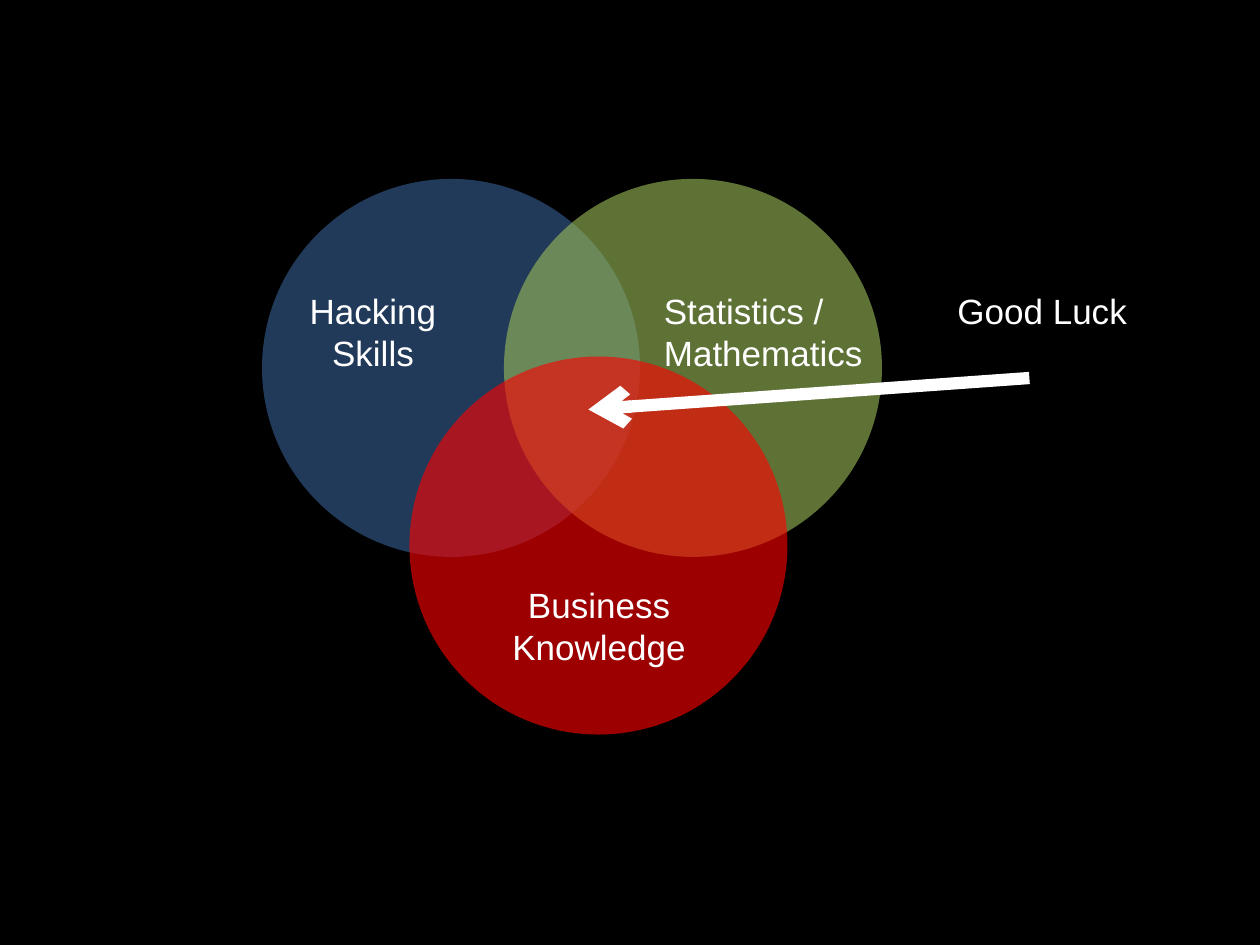
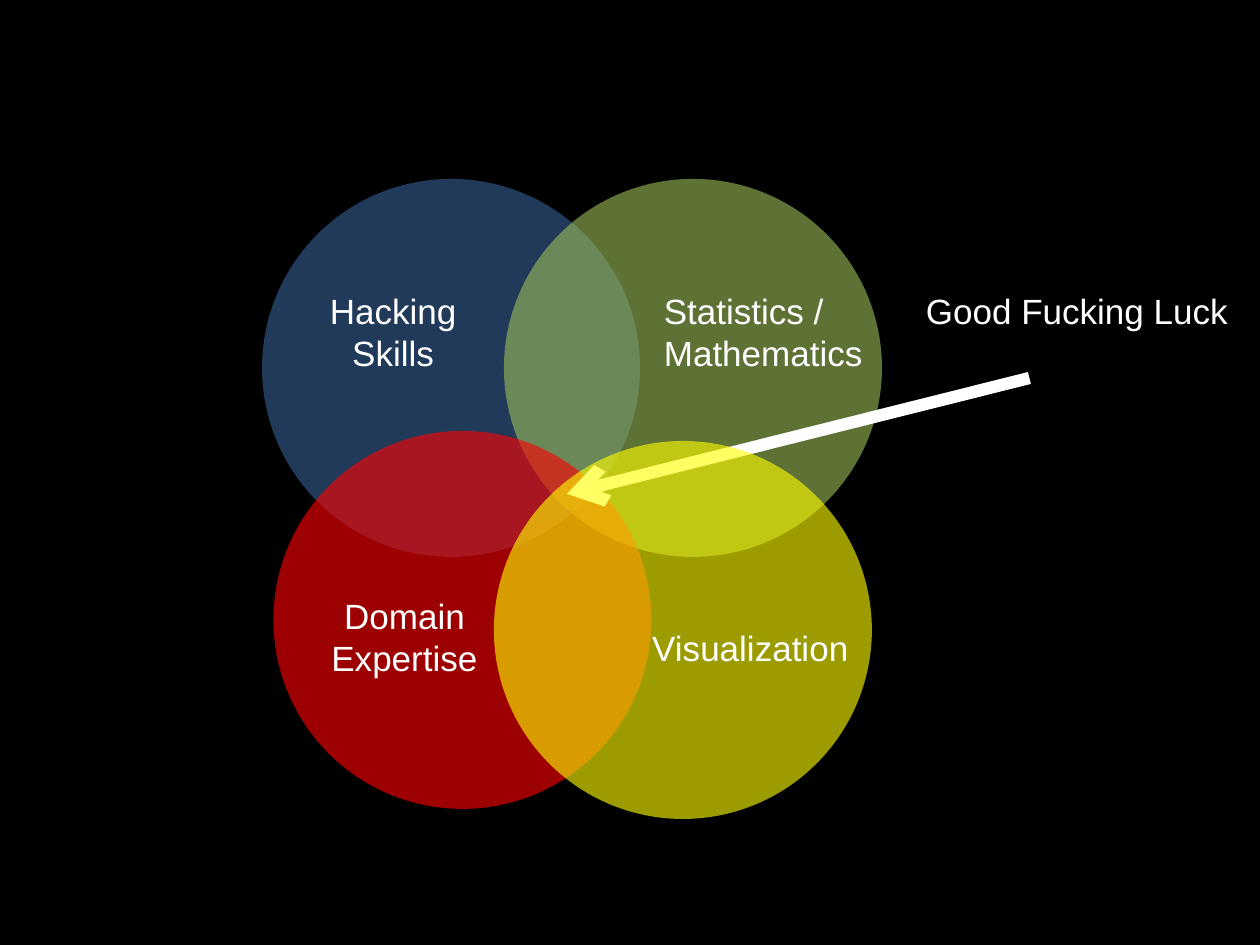
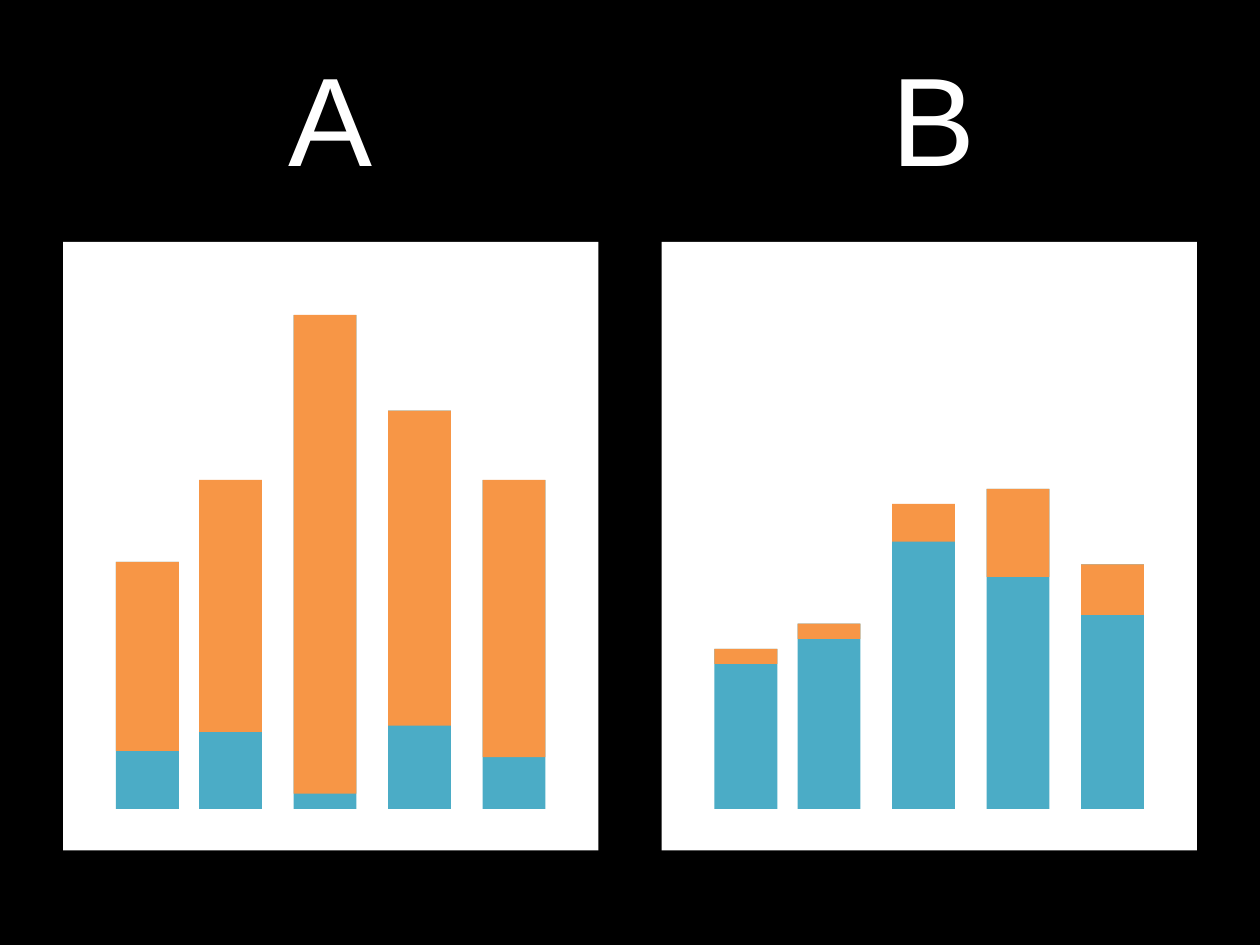
from lxml import etree
from pptx import Presentation
from pptx.dml.color import RGBColor
from pptx.enum.shapes import MSO_CONNECTOR, MSO_SHAPE
from pptx.enum.text import MSO_AUTO_SIZE, PP_ALIGN
from pptx.oxml.ns import qn
from pptx.util import Inches, Pt

LEFT, CENTER = PP_ALIGN.LEFT, PP_ALIGN.CENTER
OVAL, RECT = MSO_SHAPE.OVAL, MSO_SHAPE.RECTANGLE

BLACK = RGBColor(0x00, 0x00, 0x00)
WHITE = RGBColor(0xFF, 0xFF, 0xFF)
BLUE = RGBColor(0x37, 0x60, 0x92)
GREEN = RGBColor(0x9B, 0xBB, 0x59)
RED = RGBColor(0xFF, 0x00, 0x00)
YELLOW = RGBColor(0xFF, 0xFF, 0x00)
TEAL = RGBColor(0x4B, 0xAC, 0xC6)
ORANGE = RGBColor(0xF7, 0x96, 0x46)

FONT = "Arial"
DIAMETER = 3
CIRCLE_ALPHA = 61


def add_filled(slide, kind, x, y, w, h, color, alpha=100):
    """Add a borderless shape; alpha is its opacity in percent."""
    sp = slide.shapes.add_shape(kind, Inches(x), Inches(y), Inches(w), Inches(h))
    sp.shadow.inherit = False
    sp.fill.solid()
    sp.fill.fore_color.rgb = color
    sp.line.fill.background()
    if alpha < 100:
        clr = sp.fill._xPr.find(".//" + qn("a:srgbClr"))
        etree.SubElement(clr, qn("a:alpha"), val=str(alpha * 1000))


def add_label(slide, text, x, y, w, h, align=LEFT, size=20, wrap=True):
    box = slide.shapes.add_textbox(Inches(x), Inches(y), Inches(w), Inches(h))
    tf = box.text_frame
    tf.word_wrap = wrap
    tf.auto_size = MSO_AUTO_SIZE.SHAPE_TO_FIT_TEXT
    p = tf.paragraphs[0]
    p.alignment = align
    r = p.add_run()
    r.text = text
    r.font.name = FONT
    r.font.size = Pt(size)
    r.font.color.rgb = WHITE


prs = Presentation()
prs.slide_width, prs.slide_height = Inches(10), Inches(7.5)
prs.slide_master.background.fill.solid()
prs.slide_master.background.fill.fore_color.rgb = BLACK
blank = prs.slide_layouts[6]

# Venn slides: circles and labels, then the arrow, then what covers the arrow
shared_circles = [(2.08, 1.42, BLUE), (4, 1.42, GREEN)]
statistics = ("Statistics / Mathematics", 5.17, 2.25, 2.25, 0.77, LEFT)
venns = [
    {
        "circles": shared_circles + [(3.25, 2.83, RED)],
        "labels": [
            ("Hacking Skills", 2.25, 2.25, 1.42, 0.77, CENTER),
            statistics,
            ("Business Knowledge", 3.92, 4.58, 1.67, 0.77, CENTER),
            ("Good Luck", 7.5, 2.25, 2.25, 0.44, LEFT),
        ],
        "arrow_tip": (4.67, 3.25),
        "top_circles": [],
        "top_labels": [],
    },
    {
        "circles": shared_circles + [(2.17, 3.42, RED)],
        "labels": [
            ("Hacking Skills", 2.33, 2.25, 1.58, 0.77, CENTER),
            statistics,
            ("Domain Expertise", 2.42, 4.67, 1.58, 0.77, CENTER),
            ("Good Fucking Luck", 7.25, 2.25, 2.75, 0.44, LEFT),
        ],
        "arrow_tip": (4.5, 3.92),
        "top_circles": [(3.92, 3.5, YELLOW)],
        "top_labels": [("Visualization", 4.83, 4.92, 2.25, 0.44, CENTER)],
    },
]

for venn in venns:
    s = prs.slides.add_slide(blank)
    for x, y, color in venn["circles"]:
        add_filled(s, OVAL, x, y, DIAMETER, DIAMETER, color, CIRCLE_ALPHA)
    for label in venn["labels"]:
        add_label(s, *label)

    tip_x, tip_y = venn["arrow_tip"]
    arrow = s.shapes.add_connector(MSO_CONNECTOR.STRAIGHT, Inches(8.17), Inches(3),
                                   Inches(tip_x), Inches(tip_y))
    arrow.line.color.rgb = WHITE
    arrow.line.width = Pt(7)
    etree.SubElement(arrow.line._get_or_add_ln(), qn("a:tailEnd"), type="arrow")
    etree.SubElement(arrow._element.spPr, qn("a:effectLst"))

    for x, y, color in venn["top_circles"]:
        add_filled(s, OVAL, x, y, DIAMETER, DIAMETER, color, CIRCLE_ALPHA)
    for label in venn["top_labels"]:
        add_label(s, *label)

# Two panels of stacked bars
BASELINE = 6.42
BAR_WIDTH = 0.5
BAR_OFFSETS = [0.42, 1.08, 1.83, 2.58, 3.33]
panels = [
    # heading, heading left, panel left, (bar top, orange height) per bar
    ("A", 2.19, 0.5, [(4.46, 1.5), (3.81, 2), (2.5, 3.8), (3.26, 2.5), (3.81, 2.2)]),
    ("B", 6.98, 5.25, [(5.15, 0.12), (4.95, 0.12), (4, 0.3), (3.88, 0.7), (4.48, 0.4)]),
]

s = prs.slides.add_slide(blank)
for heading, heading_x, panel_x, bars in panels:
    add_filled(s, RECT, panel_x, 1.92, 4.25, 4.83, WHITE)
    for offset, (top, orange_height) in zip(BAR_OFFSETS, bars):
        x = panel_x + offset
        add_filled(s, RECT, x, top, BAR_WIDTH, BASELINE - top, TEAL)
        add_filled(s, RECT, x, top, BAR_WIDTH, orange_height, ORANGE)
    add_label(s, heading, heading_x, 0.27, 0.88, 1.31, size=72, wrap=False)

prs.save("out.pptx")
